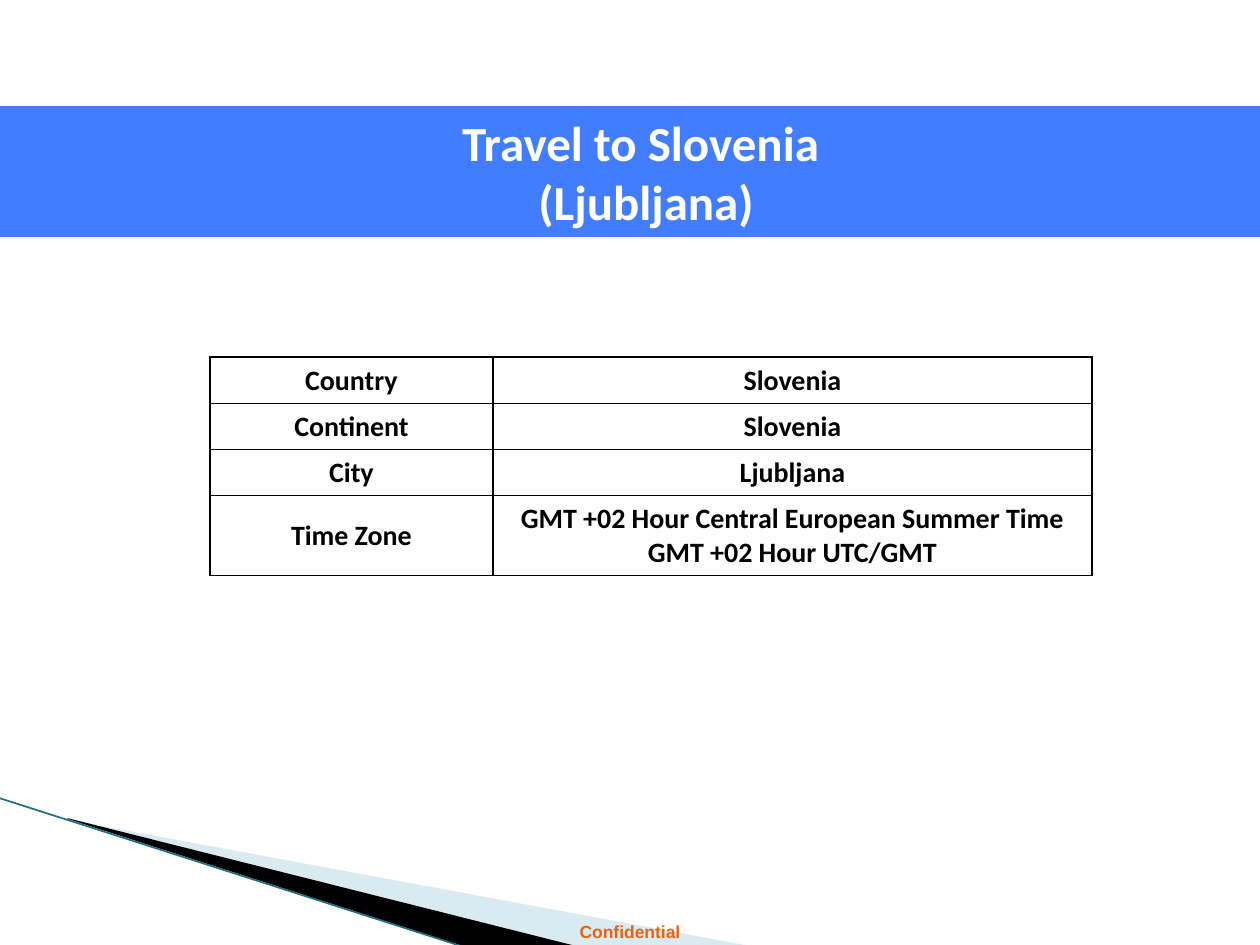
from lxml.etree import SubElement
from pptx import Presentation
from pptx.dml.color import RGBColor
from pptx.enum.text import MSO_ANCHOR as Anchor, MSO_AUTO_SIZE as AutoSize, PP_ALIGN as Align
from pptx.enum.shapes import MSO_CONNECTOR as Connector
from pptx.oxml.ns import qn
from pptx.util import Emu, Pt

PX = 914400 / 126
CELL_TEXT = {"name": "Calibri", "size": Pt(16), "bold": True}
TITLE_TEXT = {"name": "Calibri", "size": Pt(28), "bold": True}
FOOTER_TEXT = {"name": "Arial", "size": Pt(10), "bold": True}
FACTS = [
    ("Country", "Slovenia"),
    ("Continent", "Slovenia"),
    ("City", "Ljubljana"),
    ("Time Zone", "GMT +02 Hour Central European Summer Time GMT +02 Hour UTC/GMT"),
]


def px(*lengths):
    return [Emu(round(length * PX)) for length in lengths]


def rgb(hex_color):
    return RGBColor.from_string(hex_color)


def write(frame, text, font_format, color):
    """Fill a text frame with centred paragraphs, one per line of text."""
    frame.text = text
    for paragraph in frame.paragraphs:
        paragraph.alignment = Align.CENTER
        for run in paragraph.runs:
            for attribute, value in font_format.items():
                setattr(run.font, attribute, value)
            run.font.color.rgb = rgb(color)


def add_wedge(slide, left, top, points, color, opacity=100):
    corners = [(left + x, top + y) for x, y in points]
    builder = slide.shapes.build_freeform(*corners[0], scale=PX)
    builder.add_line_segments(corners[1:], close=True)
    wedge = builder.convert_to_shape()
    wedge.shadow.inherit = False
    wedge.fill.solid()
    wedge.fill.fore_color.rgb = rgb(color)
    wedge.line.fill.background()
    if opacity < 100:
        color_element = wedge.fill._xPr.find(".//" + qn("a:srgbClr"))
        SubElement(color_element, qn("a:alpha"), val=str(opacity * 1000))


def add_corner_sweep(slide, left, top):
    add_wedge(slide, left, top, [(70, 22), (751, 148), (576, 148), (70, 21)], "A0CBDC", 40)
    add_wedge(slide, left, top, [(68, 20), (577, 148), (470, 150), (69, 21)], "000000")
    edge = slide.shapes.add_connector(
        Connector.STRAIGHT, *px(left, top, left + 468, top + 150))
    edge.line.color.rgb = rgb("1B7083")
    edge.line.width = Pt(0.95)
    SubElement(edge._element.spPr, qn("a:effectLst"))


def add_footer(slide, left, top, width, height):
    footer = slide.shapes.add_textbox(*px(left, top, width, height))
    footer.text_frame.word_wrap = True
    write(footer.text_frame, "Confidential", FOOTER_TEXT, "EB6312")


def add_title_band(slide, left, top, width, height):
    band = slide.shapes.title
    band.left, band.top, band.width, band.height = px(left, top, width, height)
    band.fill.solid()
    band.fill.fore_color.rgb = rgb("437DFF")
    band.text_frame.auto_size = AutoSize.NONE
    band.text_frame.vertical_anchor = Anchor.MIDDLE
    write(band.text_frame, "Travel to Slovenia\n (Ljubljana)", TITLE_TEXT, "FFFFFF")


def add_borders(cell, color):
    properties = cell._tc.get_or_add_tcPr()
    for side in ("a:lnL", "a:lnR", "a:lnT", "a:lnB"):
        border = SubElement(properties, qn(side), w=str(Pt(1)))
        fill = SubElement(border, qn("a:solidFill"))
        SubElement(fill, qn("a:srgbClr"), val=color)


def add_facts_table(slide, left, top, column_widths, row_heights):
    frame = slide.shapes.add_table(
        len(row_heights), len(column_widths),
        *px(left, top, sum(column_widths), sum(row_heights)))
    table = frame.table
    table.first_row = table.horz_banding = False
    for column, width in zip(table.columns, px(*column_widths)):
        column.width = width
    for row, height, fact in zip(table.rows, px(*row_heights), FACTS):
        row.height = height
        for cell, text in zip(row.cells, fact):
            write(cell.text_frame, text, CELL_TEXT, "000000")
            cell.vertical_anchor = Anchor.MIDDLE
            add_borders(cell, "000000")
            cell.fill.background()


def main():
    deck = Presentation()
    deck.slide_width, deck.slide_height = px(1260, 945)
    slide = deck.slides.add_slide(deck.slide_layouts[5])
    add_corner_sweep(slide, -1, 798)
    add_footer(slide, 0, 915, 1260, 34)
    add_title_band(slide, 0, 106, 1281, 131)
    add_facts_table(slide, 210, 357, [283, 599], [46, 46, 46, 80])
    deck.save("out.pptx")


if __name__ == "__main__":
    main()
